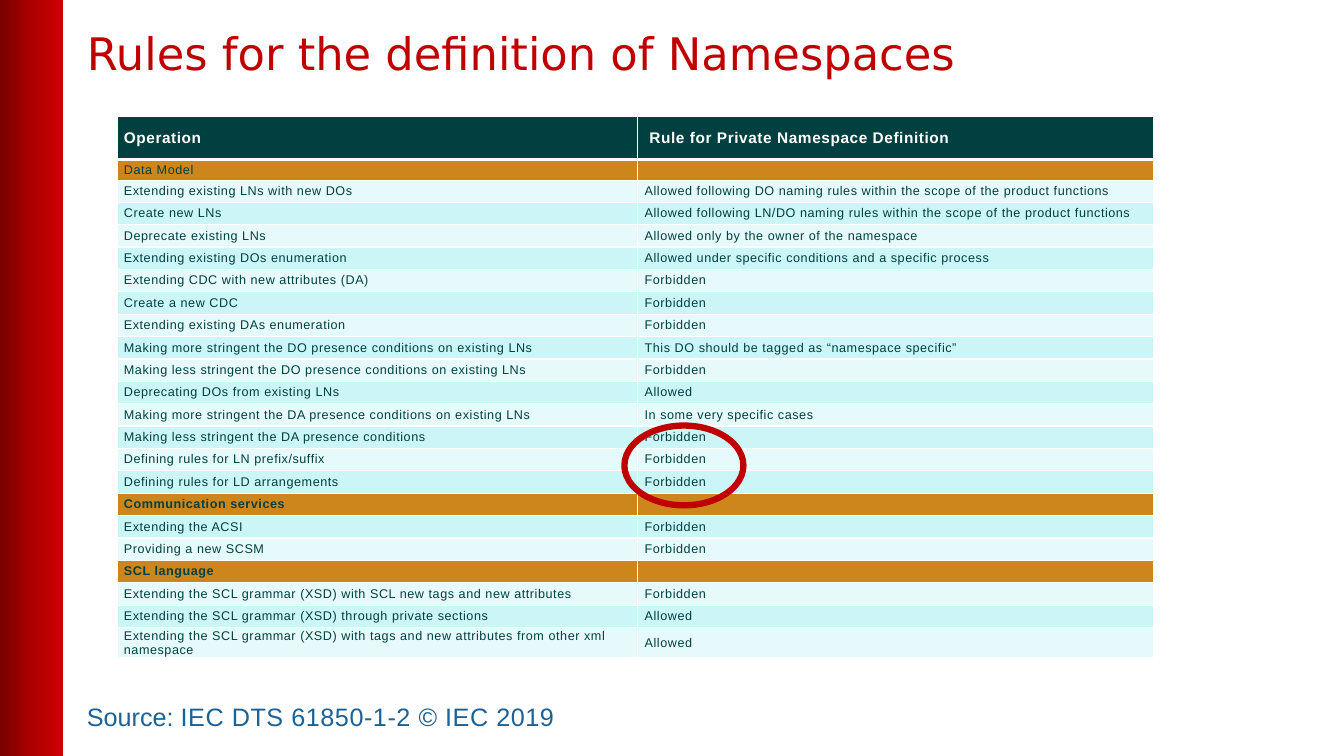
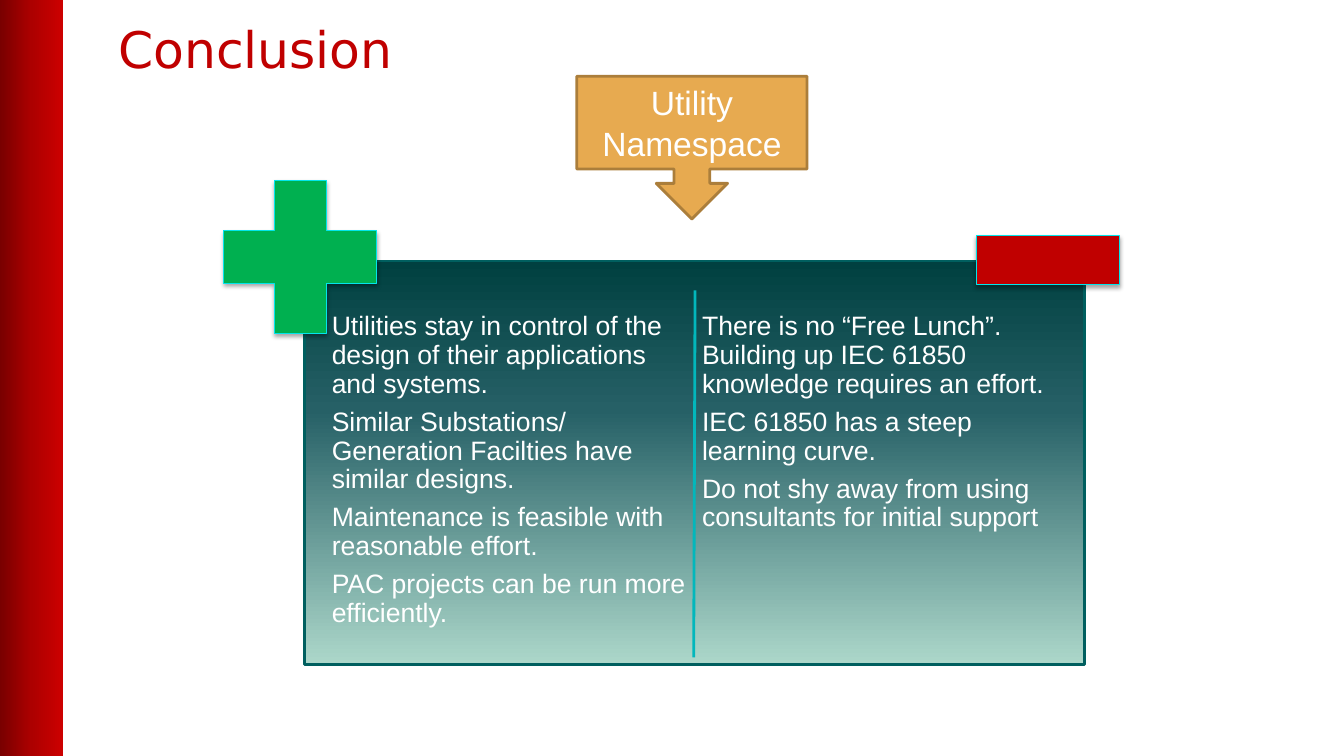
import dataclasses
import typing

import lxml.etree
import pptx
import pptx.dml.color
import pptx.enum.shapes
import pptx.enum.text
import pptx.oxml.ns
import pptx.shapes.autoshape
import pptx.slide
import pptx.table
import pptx.text.text
import pptx.util

EMU_PER_PX = 6350
SHAPES = pptx.enum.shapes.MSO_SHAPE
ANCHORS = pptx.enum.text.MSO_ANCHOR
ALIGNMENTS = pptx.enum.text.PP_ALIGN


@dataclasses.dataclass(frozen=True)
class Theme:
    title_font: str = "DejaVu Sans"
    body_font: str = "Arial"
    red: str = "C00000"
    white: str = "FFFFFF"
    dark_teal: str = "004040"
    panel_line: str = "005F5F"
    divider: str = "02B7BC"
    sign_line: str = "03E5EB"
    green: str = "00B050"
    section: str = "CD861C"
    light_row: str = "E7FAFB"
    tinted_row: str = "CCF5F7"
    source: str = "1C6294"
    callout: str = "E7AA50"
    callout_line: str = "AB7E3B"
    band_stops: tuple = ((0, "790000"), (50, "AC0000"), (100, "CC0000"))
    panel_stops: tuple = ((0, "004040"), (37, "266066"), (100, "ACD7CA"))
    header_size: float = 11
    cell_size: float = 9
    source_size: float = 18
    panel_size: float = 19
    callout_size: float = 24
    tracking: float = 0.4


THEME = Theme()


class Box(typing.NamedTuple):
    left: int
    top: int
    width: int
    height: int


class Rule(typing.NamedTuple):
    operation: str
    ruling: str = ""
    bold: bool = False


class Sign(typing.NamedTuple):
    preset: SHAPES
    box: Box
    color: str
    adjustments: tuple[float, ...] = ()


class Argument(typing.NamedTuple):
    left: int
    points: tuple[str, ...]


RULES = (
    Rule("Operation", " Rule for Private Namespace Definition", True),
    Rule("Data Model"),
    Rule("Extending existing LNs with new DOs",
         "Allowed following DO naming rules within the scope of the product functions"),
    Rule("Create new LNs",
         "Allowed following LN/DO naming rules within the scope of the product functions"),
    Rule("Deprecate existing LNs", "Allowed only by the owner of the namespace"),
    Rule("Extending existing DOs enumeration",
         "Allowed under specific conditions and a specific process"),
    Rule("Extending CDC with new attributes (DA)", "Forbidden"),
    Rule("Create a new CDC", "Forbidden"),
    Rule("Extending existing DAs enumeration", "Forbidden"),
    Rule("Making more stringent the DO presence conditions on existing LNs",
         "This DO should be tagged as “namespace specific”"),
    Rule("Making less stringent the DO presence conditions on existing LNs", "Forbidden"),
    Rule("Deprecating DOs from existing LNs", "Allowed"),
    Rule("Making more stringent the DA presence conditions on existing LNs",
         "In some very specific cases"),
    Rule("Making less stringent the DA presence conditions", "Forbidden"),
    Rule("Defining rules for LN prefix/suffix", "Forbidden"),
    Rule("Defining rules for LD arrangements", "Forbidden"),
    Rule("Communication services", bold=True),
    Rule("Extending the ACSI", "Forbidden"),
    Rule("Providing a new SCSM", "Forbidden"),
    Rule("SCL language", bold=True),
    Rule("Extending the SCL grammar (XSD) with SCL new tags and new attributes", "Forbidden"),
    Rule("Extending the SCL grammar (XSD) through private sections", "Allowed"),
    Rule("Extending the SCL grammar (XSD) with tags and new attributes from other xml namespace",
         "Allowed"),
)
COLUMN_WIDTHS = (744, 737)
ROW_HEIGHTS = (62, 30, 31) + (32,) * (len(RULES) - 4) + (41,)

ARGUMENTS = (
    Argument(468, (
        "Utilities stay in control of the design of their applications and systems.",
        "Similar Substations/ Generation Facilties have similar designs.",
        "Maintenance is feasible with reasonable effort.",
        "PAC projects can be run more efficiently.",
    )),
    Argument(997, (
        "There is no “Free Lunch”. Building up IEC 61850 knowledge requires an effort.",
        "IEC 61850 has a steep learning curve.",
        "Do not shy away from using consultants for initial support",
    )),
)
SIGNS = (
    Sign(SHAPES.CROSS, Box(320, 258, 218, 218), THEME.green, (0.328,)),
    Sign(SHAPES.RECTANGLE, Box(1395, 337, 204, 70), THEME.red),
)


def px(length: int) -> pptx.util.Emu:
    return pptx.util.Emu(length * EMU_PER_PX)


def place(box: Box) -> tuple[pptx.util.Emu, ...]:
    return tuple(px(length) for length in box)


def rgb(color: str) -> pptx.dml.color.RGBColor:
    return pptx.dml.color.RGBColor.from_string(color)


def add_element(parent: lxml.etree._Element, tag: str, **attributes: str) -> lxml.etree._Element:
    return lxml.etree.SubElement(parent, pptx.oxml.ns.qn(tag), attributes)


def style_font(font: pptx.text.text.Font, size: float, color: str,
               name: str = THEME.body_font, bold: bool = False) -> None:
    font.name, font.size, font.bold = name, pptx.util.Pt(size), bold
    font.color.rgb = rgb(color)


def track(font: pptx.text.text.Font) -> None:
    font._element.set("spc", str(round(THEME.tracking * 100)))


def add_shape(slide: pptx.slide.Slide, preset: SHAPES, box: Box, fill: str | None = None,
              line: str | None = None, weight: float = 2) -> pptx.shapes.autoshape.Shape:
    shape = slide.shapes.add_shape(preset, *place(box))
    shape.shadow.inherit = False
    if fill:
        shape.fill.solid()
        shape.fill.fore_color.rgb = rgb(fill)
    else:
        shape.fill.background()
    if line:
        shape.line.color.rgb = rgb(line)
        shape.line.width = pptx.util.Pt(weight)
    else:
        shape.line.fill.background()
    return shape


def fill_gradient(shape: pptx.shapes.autoshape.Shape, stops: tuple, angle: int) -> None:
    shape.fill.gradient()
    shape.fill.gradient_angle = angle
    stop_list = shape._element.spPr.find(".//" + pptx.oxml.ns.qn("a:gsLst"))
    for stop in list(stop_list):
        stop_list.remove(stop)
    for position, color in stops:
        stop = add_element(stop_list, "a:gs", pos=str(position * 1000))
        add_element(stop, "a:srgbClr", val=color)


def add_shadow(shape: pptx.shapes.autoshape.Shape) -> None:
    effects = shape._element.spPr.find(pptx.oxml.ns.qn("a:effectLst"))
    shadow = add_element(effects, "a:outerShdw", blurRad=str(pptx.util.Pt(3.1)),
                         dist=str(pptx.util.Pt(1.8)), dir="5400000", rotWithShape="0")
    color = add_element(shadow, "a:srgbClr", val="000000")
    add_element(color, "a:alpha", val="35000")


def add_text_frame(slide: pptx.slide.Slide, box: Box) -> pptx.text.text.TextFrame:
    frame = slide.shapes.add_textbox(*place(box)).text_frame
    frame.word_wrap = True
    return frame


def add_titled_slide(presentation: pptx.presentation.Presentation, title: str,
                     left: int, size: float) -> pptx.slide.Slide:
    slide = presentation.slides.add_slide(presentation.slide_layouts[6])
    band = add_shape(slide, SHAPES.RECTANGLE, Box(0, 0, 90, 1080))
    fill_gradient(band, THEME.band_stops, 0)
    frame = add_text_frame(slide, Box(left, 29, 1701, 91))
    frame.vertical_anchor = ANCHORS.BOTTOM
    frame.text = title
    style_font(frame.paragraphs[0].font, size, THEME.red, THEME.title_font)
    return slide


def add_borders(cell: pptx.table._Cell, bottom_weight: float) -> None:
    properties = cell._tc.get_or_add_tcPr()
    for side, weight in (("L", 1), ("R", 1), ("T", 1), ("B", bottom_weight)):
        border = add_element(properties, f"a:ln{side}", w=str(pptx.util.Pt(weight)))
        add_element(add_element(border, "a:solidFill"), "a:srgbClr", val=THEME.white)


def row_fill(index: int, rule: Rule) -> str:
    if index == 0:
        return THEME.dark_teal
    if not rule.ruling:
        return THEME.section
    return THEME.tinted_row if index % 2 else THEME.light_row


def fill_cell(cell: pptx.table._Cell, text: str, index: int, rule: Rule) -> None:
    header = index == 0
    size = THEME.header_size if header else THEME.cell_size
    add_borders(cell, 3 if header else 1)
    cell.fill.solid()
    cell.fill.fore_color.rgb = rgb(row_fill(index, rule))
    cell.vertical_anchor = ANCHORS.MIDDLE
    cell.margin_left = cell.margin_right = px(10)
    cell.margin_top = cell.margin_bottom = 0
    paragraph = cell.text_frame.paragraphs[0]
    if text:
        run = paragraph.add_run()
        run.text = text
        style_font(run.font, size, THEME.white if header else THEME.dark_teal, bold=rule.bold)
        track(run.font)
    else:
        add_element(paragraph._p, "a:endParaRPr", sz=str(round(size * 100)))


def add_rules_table(slide: pptx.slide.Slide) -> None:
    box = Box(167, 166, sum(COLUMN_WIDTHS), sum(ROW_HEIGHTS))
    table = slide.shapes.add_table(len(RULES), len(COLUMN_WIDTHS), *place(box)).table
    table.first_row = table.horz_banding = False
    for column, width in zip(table.columns, COLUMN_WIDTHS):
        column.width = px(width)
    for index, (rule, height) in enumerate(zip(RULES, ROW_HEIGHTS)):
        table.rows[index].height = px(height)
        for column_index, text in enumerate((rule.operation, rule.ruling)):
            fill_cell(table.cell(index, column_index), text, index, rule)


def add_source(slide: pptx.slide.Slide) -> None:
    paragraph = add_text_frame(slide, Box(110, 995, 704, 58)).paragraphs[0]
    paragraph.add_run().text = "Source: "
    reference = paragraph.add_run()
    reference.text = "IEC DTS 61850-1-2 © IEC 2019"
    track(reference.font)
    style_font(paragraph.font, THEME.source_size, THEME.source)


def add_argument(slide: pptx.slide.Slide, argument: Argument) -> None:
    frame = add_text_frame(slide, Box(argument.left, 441, 520, 492))
    frame.margin_left = frame.margin_top = frame.margin_bottom = px(6)
    frame.margin_right = px(4)
    frame.text = "\n".join(argument.points)
    for paragraph in frame.paragraphs:
        paragraph.line_spacing = 0.9
        paragraph.space_after = pptx.util.Pt(THEME.panel_size * 0.35)
        style_font(paragraph.font, THEME.panel_size, THEME.white)


def add_divider(slide: pptx.slide.Slide) -> None:
    divider = slide.shapes.add_connector(pptx.enum.shapes.MSO_CONNECTOR.STRAIGHT,
                                         px(993), px(415), px(991), px(939))
    divider.line.color.rgb = rgb(THEME.divider)
    divider.line.width = pptx.util.Pt(2)
    add_element(divider._element.spPr, "a:effectLst")


def build_rules(presentation: pptx.presentation.Presentation) -> None:
    slide = add_titled_slide(presentation, "Rules for the definition of Namespaces", 110, 32)
    add_rules_table(slide)
    add_shape(slide, SHAPES.OVAL, Box(892, 608, 170, 114), line=THEME.red, weight=4.5)
    add_source(slide)


def build_conclusion(presentation: pptx.presentation.Presentation) -> None:
    slide = add_titled_slide(presentation, "Conclusion", 155, 36)
    panel = add_shape(slide, SHAPES.RECTANGLE, Box(435, 373, 1114, 576), line=THEME.panel_line)
    fill_gradient(panel, THEME.panel_stops, 270)
    for argument in ARGUMENTS:
        add_argument(slide, argument)
    for sign in SIGNS:
        shape = add_shape(slide, sign.preset, sign.box, sign.color, THEME.sign_line, 0.75)
        for index, value in enumerate(sign.adjustments):
            shape.adjustments[index] = value
        add_shadow(shape)
    add_divider(slide)
    callout = add_shape(slide, SHAPES.DOWN_ARROW_CALLOUT, Box(824, 109, 329, 204),
                        THEME.callout, THEME.callout_line)
    callout.text_frame.text = "Utility Namespace"
    callout.text_frame.word_wrap = True
    callout.text_frame.vertical_anchor = ANCHORS.MIDDLE
    paragraph = callout.text_frame.paragraphs[0]
    paragraph.alignment = ALIGNMENTS.CENTER
    style_font(paragraph.font, THEME.callout_size, THEME.white)


def main() -> None:
    presentation = pptx.Presentation()
    presentation.slide_width, presentation.slide_height = px(1920), px(1080)
    build_rules(presentation)
    build_conclusion(presentation)
    presentation.save("out.pptx")


if __name__ == "__main__":
    main()
